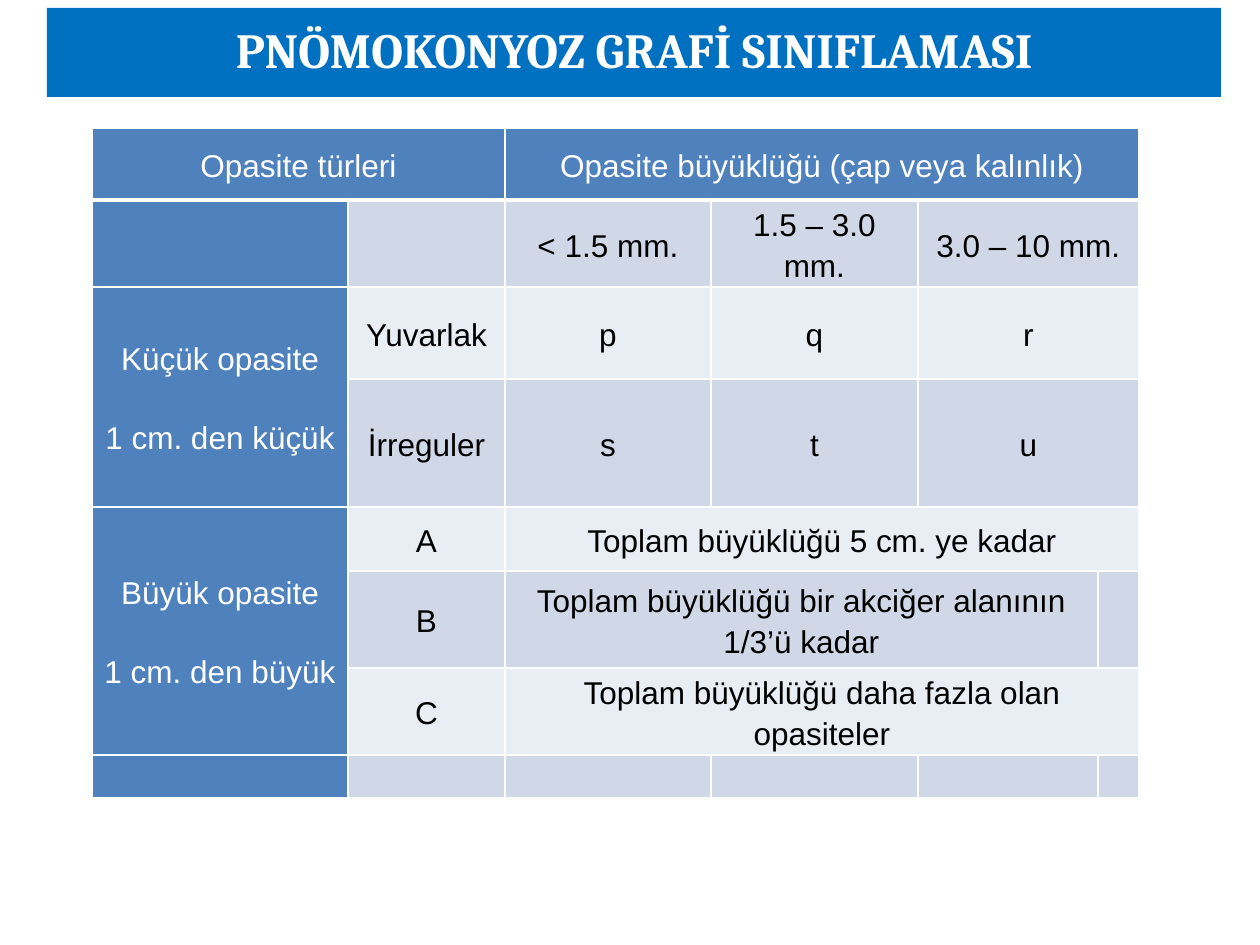
from lxml import etree
from pptx import Presentation
from pptx.dml.color import RGBColor
from pptx.enum.text import MSO_ANCHOR as Anchor, MSO_AUTO_SIZE as Fit, PP_ALIGN as Align
from pptx.oxml.ns import qn
from pptx.util import Emu, Pt

WHITE = RGBColor(0xFF, 0xFF, 0xFF)
BLACK = RGBColor(0, 0, 0)
BANNER = RGBColor(0x00, 0x70, 0xC0)
HEAD = RGBColor(0x4F, 0x81, 0xBD)
DARK = RGBColor(0xD0, 0xD8, 0xE8)
LIGHT = RGBColor(0xE9, 0xED, 0xF4)


def px(n):
    return Emu(round(n * 914400 / 126))


def edge(cell, side, width):
    line = etree.SubElement(cell._tc.get_or_add_tcPr(), qn("a:" + side), w=str(Pt(width)))
    fill = etree.SubElement(line, qn("a:solidFill"))
    etree.SubElement(fill, qn("a:srgbClr"), val=str(WHITE))


deck = Presentation()
deck.slide_width, deck.slide_height = px(1260), px(945)
slide = deck.slides.add_slide(deck.slide_layouts[5])

# Title banner
title = slide.shapes.title
title.left, title.top, title.width, title.height = px(47), px(8), px(1174), px(89)
title.fill.solid()
title.fill.fore_color.rgb = BANNER
frame = title.text_frame
frame.text = "PNÖMOKONYOZ GRAFİ SINIFLAMASI"
frame.auto_size = Fit.NONE
frame.word_wrap = True
frame.vertical_anchor = Anchor.MIDDLE
frame.margin_left = frame.margin_right = 0
para = frame.paragraphs[0]
para.alignment = Align.CENTER
para.line_spacing = 0.9
font = para.runs[0].font
font.name, font.size, font.bold = "Cambria", Pt(28), True
font.color.rgb = WHITE

# Table grid
cols = [256, 157, 206, 207, 180, 41]
rows = [72, 87, 92, 128, 64, 97, 87, 43]
table = slide.shapes.add_table(
    len(rows), len(cols), px(92), px(128), px(sum(cols)), px(sum(rows))).table
table.first_col = True
for col, wide in zip(table.columns, cols):
    col.width = px(wide)
for row, high in zip(table.rows, rows):
    row.height = px(high)

# Merged cells: first row and column, last row and column
spans = [
    (0, 0, 0, 1), (0, 2, 0, 5),
    (1, 4, 1, 5), (2, 4, 2, 5), (3, 4, 3, 5),
    (2, 0, 3, 0), (4, 0, 6, 0),
    (4, 2, 4, 5), (5, 2, 5, 4), (6, 2, 6, 5),
]
for top, left, low, right in spans:
    table.cell(top, left).merge(table.cell(low, right))

words = [
    ["Opasite türleri", "", "Opasite büyüklüğü (çap veya kalınlık)"],
    ["", "", "< 1.5 mm.", "1.5 – 3.0 mm.", "3.0 – 10 mm."],
    ["Küçük opasite\n1 cm. den küçük", "Yuvarlak", "p", "q", "r"],
    ["", "İrreguler", "s", "t", "u"],
    ["Büyük opasite\n1 cm. den büyük", "A", "Toplam büyüklüğü 5 cm. ye kadar"],
    ["", "B", "Toplam büyüklüğü bir akciğer alanının 1/3’ü kadar"],
    ["", "C", "Toplam büyüklüğü daha fazla olan opasiteler"],
    [],
]

# Cell borders, fills and margins
for r in range(len(rows)):
    for c in range(len(cols)):
        cell = table.cell(r, c)
        for side in ("lnL", "lnR", "lnT", "lnB"):
            edge(cell, side, 3 if r == 0 and side == "lnB" else 1)
        cell.fill.solid()
        main = r == 0 or c == 0
        cell.fill.fore_color.rgb = HEAD if main else DARK if r % 2 else LIGHT
        cell.vertical_anchor = Anchor.MIDDLE
        cell.margin_left = cell.margin_right = px(9)
        cell.margin_top = cell.margin_bottom = 0

# Cell text
for r, line in enumerate(words):
    for c, text in enumerate(line):
        if not text:
            continue
        frame = table.cell(r, c).text_frame
        frame.text = text
        for i, para in enumerate(frame.paragraphs):
            para.alignment = Align.CENTER
            para.line_spacing = 1.15
            para.space_before = Pt(12 if i else 0)
            para.space_after = Pt(10)
            font = para.runs[0].font
            font.name, font.size, font.bold = "Arial", Pt(18), False
            font.color.rgb = WHITE if r == 0 or c == 0 else BLACK

deck.save("out.pptx")
